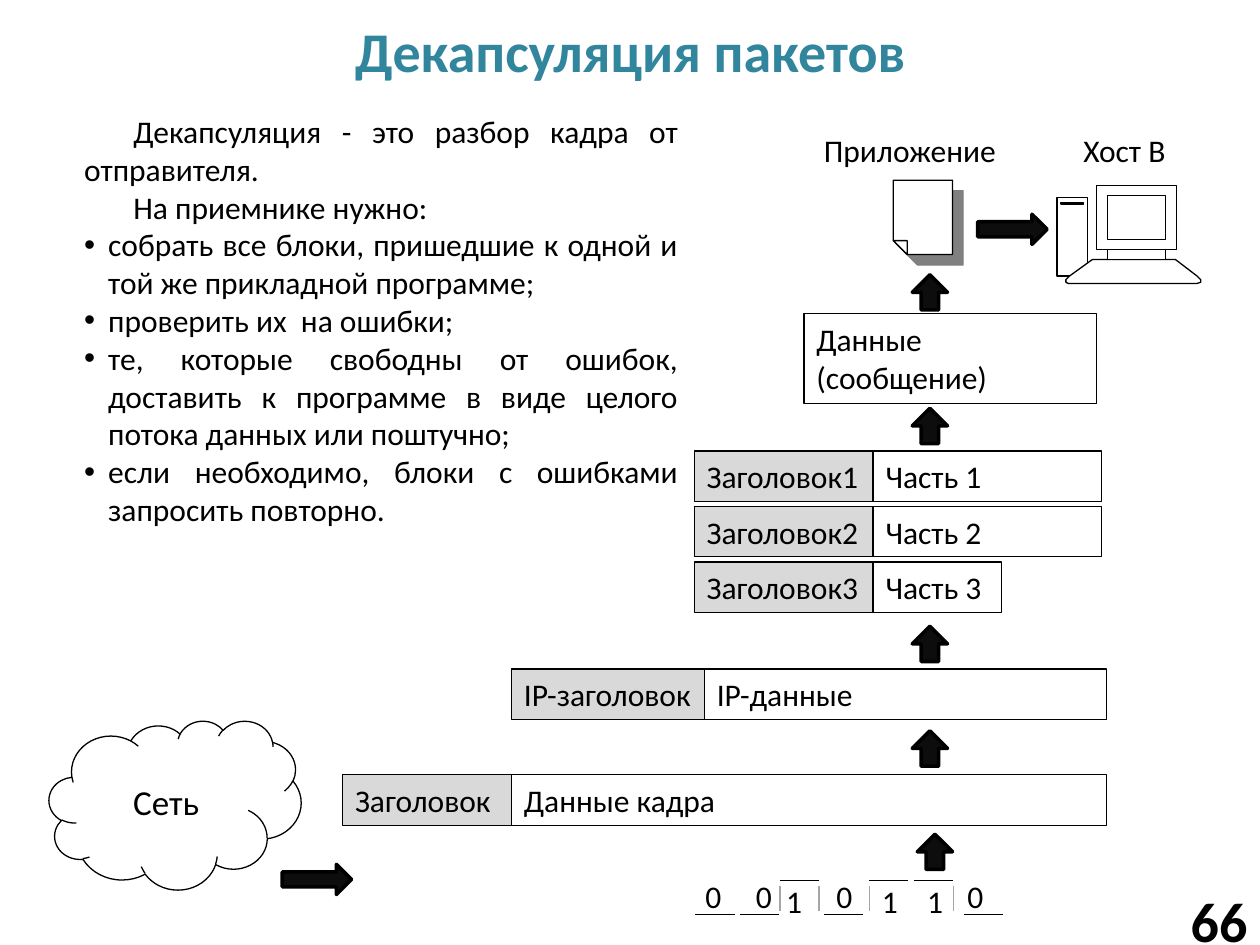
from dataclasses import dataclass

from lxml import etree
from pptx import Presentation
from pptx.dml.color import RGBColor
from pptx.enum.shapes import MSO_CONNECTOR, MSO_SHAPE
from pptx.enum.text import MSO_ANCHOR, PP_ALIGN
from pptx.oxml.ns import qn
from pptx.util import Emu, Pt

PX = 9144
RECT, CLOUD = MSO_SHAPE.RECTANGLE, MSO_SHAPE.CLOUD
UP, RIGHT_ARROW = MSO_SHAPE.UP_ARROW, MSO_SHAPE.RIGHT_ARROW
STRAIGHT = MSO_CONNECTOR.STRAIGHT
TOP, MIDDLE = MSO_ANCHOR.TOP, MSO_ANCHOR.MIDDLE
LEFT, CENTER, RIGHT, JUSTIFY = PP_ALIGN.LEFT, PP_ALIGN.CENTER, PP_ALIGN.RIGHT, PP_ALIGN.JUSTIFY


@dataclass(frozen=True)
class Theme:
    """Colours, type sizes and line widths."""
    font: str = "Calibri"
    title: str = "31859C"
    ink: str = "000000"
    paper: str = "FFFFFF"
    header: str = "D9D9D9"
    arrow: str = "0D0D0D"
    edge: str = "A6A6A6"
    shadow: str = "808080"
    heading_size: int = 32
    cloud_size: int = 20
    body_size: int = 18
    thin: float = 0.75
    thick: float = 2


T = Theme()

INTRO = ["Декапсуляция - это разбор кадра от отправителя.", "На приемнике нужно:"]
STEPS = [
    "собрать все блоки, пришедшие к одной и той же прикладной программе;",
    "проверить их  на ошибки;",
    "те, которые свободны от ошибок, доставить к программе в виде целого потока данных или поштучно;",
    "если необходимо, блоки с ошибками запросить повторно.",
]
PACKETS = [
    ("Заголовок1", "Часть 1", 551, 693, 874, 358),
    ("Заголовок2", "Часть 2", 551, 693, 874, 402),
    ("Заголовок3", "Часть 3", 551, 693, 795, 446),
    ("IP-заголовок", "IP-данные", 406, 559, 878, 531),
    ("Заголовок", "Данные кадра", 272, 406, 878, 615),
]
UP_ARROWS = [(724, 218), (724, 324), (724, 497), (724, 580), (728, 662)]
BITS = [("0", 550, 552), ("0", 590, 587), ("1", 614, 619), ("0", 654, 654),
        ("1", 690, 690), ("1", 726, 725), ("0", 758, 765)]
BIT_EDGES = [619, 650, 690, 757]
PAGE = [(720, 202), (709, 191), (709, 143), (756, 143), (756, 202)]
FOLD = [(709, 191), (720, 191), (720, 202)]
KEYBOARD = [(867, 206), (933, 206), (950, 219), (953, 222), (953, 224), (950, 225),
            (848, 225), (846, 224), (846, 222), (849, 219)]


def px(*lengths):
    """Turn px lengths into EMU."""
    return [Emu(n * PX) for n in lengths]


def color(value):
    """Make a colour from its hex text."""
    return RGBColor.from_string(value)


def paint(sp, fill=None, line=T.ink, width=T.thin):
    """Give a shape its fill and outline, without a shadow."""
    sp.shadow.inherit = False
    if fill:
        sp.fill.solid()
        sp.fill.fore_color.rgb = color(fill)
    else:
        sp.fill.background()
    sp.line.color.rgb = color(line)
    sp.line.width = Pt(width)
    return sp


def write(sp, text, size=T.body_size, ink=T.ink, bold=False, align=LEFT, anchor=TOP):
    """Put text into a shape and format it."""
    tf = sp.text_frame
    tf.word_wrap = True
    tf.vertical_anchor = anchor
    tf.text = text
    for p in tf.paragraphs:
        p.alignment = align
        for r in p.runs:
            r.font.name = T.font
            r.font.size = Pt(size)
            r.font.bold = bold
            r.font.color.rgb = color(ink)
    return sp


def add_label(s, box, text, **style):
    """Add a text box."""
    return write(s.shapes.add_textbox(*px(*box)), text, **style)


def add_block(s, kind, box, **look):
    """Add a painted preset shape."""
    return paint(s.shapes.add_shape(kind, *px(*box)), **look)


def add_outline(s, points):
    """Add a closed white polygon."""
    builder = s.shapes.build_freeform(*points[0], scale=PX)
    builder.add_line_segments(points[1:], close=True)
    return paint(builder.convert_to_shape(), T.paper)


def add_line(s, x1, y1, x2, y2, ink=T.ink):
    """Add a thin straight line."""
    line = s.shapes.add_connector(STRAIGHT, *px(x1, y1, x2, y2))
    line.line.color.rgb = color(ink)
    line.line.width = Pt(T.thin)
    etree.SubElement(line._element.spPr, qn("a:effectLst"))


def add_shadow(sp):
    """Cast a hard diagonal shadow from a shape."""
    effects = sp._element.spPr.find(qn("a:effectLst"))
    shadow = etree.SubElement(effects, qn("a:outerShdw"), dist=str(Pt(8.5)),
                              dir="2700000", algn="ctr", rotWithShape="0")
    etree.SubElement(shadow, qn("a:srgbClr"), val=T.shadow)


def add_explanation(s):
    """Add the definition and the bulleted steps."""
    sp = add_label(s, (57, 84, 491, 343), "\n".join(INTRO + STEPS), align=JUSTIFY)
    for i, p in enumerate(sp.text_frame.paragraphs):
        is_step = i >= len(INTRO)
        margin, indent = px(19, -19) if is_step else px(0, 39)
        props = p._p.get_or_add_pPr()
        props.set("marL", str(margin))
        props.set("indent", str(indent))
        if is_step:
            etree.SubElement(props, qn("a:buFont"), typeface="Arial")
            etree.SubElement(props, qn("a:buChar"), char="•")


def add_computer(s):
    """Draw the receiving host."""
    tower, slot = (839, 157, 24, 62), (842, 161, 18, 1)
    monitor, screen, neck = (870, 147, 64, 51), (879, 155, 46, 35), (879, 198, 46, 8)
    add_block(s, RECT, tower, fill=T.paper)
    add_block(s, RECT, slot, fill=T.ink)
    add_outline(s, KEYBOARD)
    for box in (monitor, screen, neck):
        add_block(s, RECT, box, fill=T.paper)


def add_packet(s, header, data, left, split, right, top):
    """Add a grey header cell joined to a data cell."""
    height = 40
    write(add_block(s, RECT, (split, top, right - split, height)), data)
    write(add_block(s, RECT, (left, top, split - left, height), fill=T.header), header)


def add_bits(s):
    """Draw the bit signal with its levels and digits."""
    for bit, text_x, line_x in BITS:
        text_y, line_y = (695, 699) if bit == "1" else (691, 726)
        add_line(s, line_x, line_y, line_x + 31, line_y)
        add_label(s, (text_x, text_y, 36, 40), bit)
    for x in BIT_EDGES:
        add_line(s, x, 703, x, 723, T.edge)


def main():
    """Build the slide and save it."""
    prs = Presentation()
    prs.slide_width, prs.slide_height = px(1000, 750)
    s = prs.slides.add_slide(prs.slide_layouts[6])
    heading = dict(size=T.heading_size, bold=True, anchor=MIDDLE)
    add_label(s, (28, 5, 945, 69), "Декапсуляция пакетов", ink=T.title, align=CENTER, **heading)
    add_label(s, (886, 710, 114, 40), "66", align=RIGHT, **heading)
    add_explanation(s)
    cloud = add_block(s, CLOUD, (39, 572, 200, 134), fill=T.paper)
    write(cloud, "Сеть", size=T.cloud_size, align=CENTER, anchor=MIDDLE)
    add_computer(s)
    add_shadow(add_outline(s, PAGE))
    add_outline(s, FOLD)
    add_label(s, (850, 99, 94, 40), "Хост B")
    add_label(s, (644, 99, 168, 40), "Приложение")
    write(add_block(s, RECT, (638, 249, 232, 71)), "Данные (сообщение)")
    for packet in PACKETS:
        add_packet(s, *packet)
    solid = dict(fill=T.arrow, width=T.thick)
    for x, y in UP_ARROWS:
        add_block(s, UP, (x, y, 28, 28), **solid)
    for x, y in [(776, 170), (224, 686)]:
        add_block(s, RIGHT_ARROW, (x, y, 55, 24), **solid)
    add_bits(s)
    prs.save("out.pptx")


if __name__ == "__main__":
    main()
